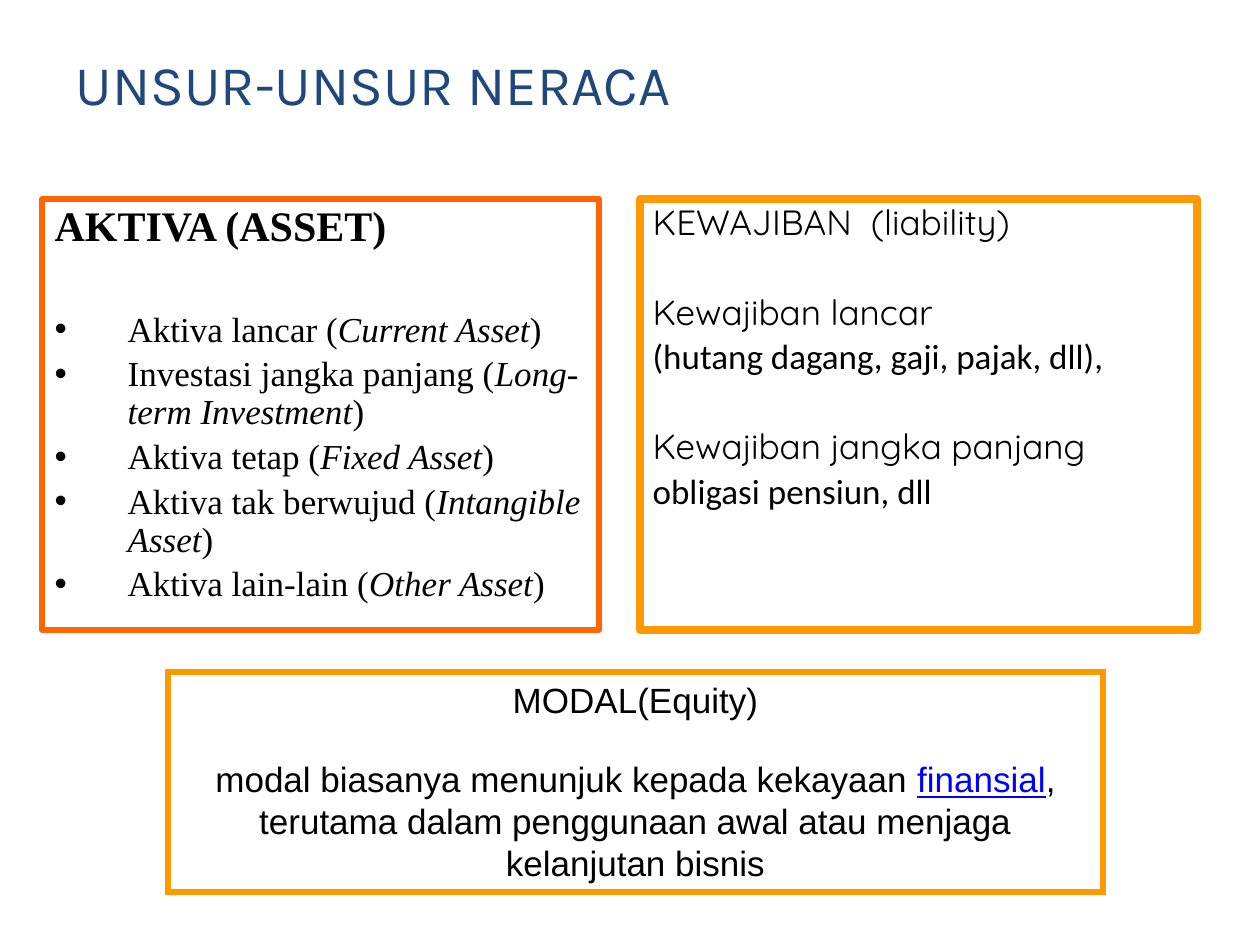
from dataclasses import dataclass

from lxml import etree
from pptx import Presentation
from pptx import util as u
from pptx.dml.color import RGBColor
from pptx.enum import shapes, text
from pptx.oxml.ns import qn

SCALE = 914400 / 126


def emu(px):
    return u.Emu(round(px * SCALE))


@dataclass(frozen=True)
class Theme:
    navy: str = "1F497D"
    black: str = "000000"
    blue: str = "0000FF"
    red: str = "FF6600"
    gold: str = "FF9900"
    title: int = 32
    head: int = 24
    body: int = 20


class Deck:
    """Holds the theme and the current slide, and adds elements to it."""

    def __init__(self, theme):
        self.theme = theme
        self.show = Presentation()
        self.show.slide_width, self.show.slide_height = emu(1260), emu(945)
        self.slide = self.show.slides.add_slide(self.show.slide_layouts[3])

    def place(self, shape, box):
        shape.left, shape.top, shape.width, shape.height = map(emu, box)
        frame = shape.text_frame
        frame.word_wrap = True
        frame.auto_size = text.MSO_AUTO_SIZE.NONE
        return frame

    def style(self, font, face, size, color):
        font.name, font.size = face, u.Pt(size)
        font.color.rgb = RGBColor.from_string(color)

    def border(self, shape, color, width):
        shape.fill.background()
        shape.line.color.rgb = RGBColor.from_string(color)
        shape.line.width = u.Pt(width)

    def line(self, frame, first, runs, face, size, gap, align=None):
        para = frame.paragraphs[0] if first else frame.add_paragraph()
        para.space_before = u.Pt(gap)
        if align is not None:
            para.alignment = align
        self.style(para.font, face, size, self.theme.black)
        for words in runs:
            para.add_run().text = words
        return para

    def indent(self, para, hang, mark):
        para.line_spacing = 0.9
        props = para._p.get_or_add_pPr()
        props.set("marL", str(emu(hang)))
        props.set("indent", str(-emu(hang)))
        bullet = etree.Element(qn("a:buChar" if mark else "a:buNone"))
        if mark:
            bullet.set("char", mark)
        props.find(qn("a:defRPr")).addprevious(bullet)

    def title(self, words, box):
        shape = self.slide.shapes.title
        frame = self.place(shape, box)
        frame.vertical_anchor = text.MSO_ANCHOR.MIDDLE
        para = frame.paragraphs[0]
        para.text = words
        para.alignment = text.PP_ALIGN.LEFT
        self.style(para.font, "Karla", self.theme.title, self.theme.navy)

    def assets(self, head, items, box):
        shape = self.slide.placeholders[1]
        frame = self.place(shape, box)
        self.border(shape, self.theme.red, 3)
        face = "Times New Roman"
        para = self.line(frame, True, [head], face, self.theme.head, 5)
        para.font.bold = True
        self.indent(para, 73, None)
        for i, (name, term) in enumerate(items):
            runs = [f"{name} (", term, ")"]
            gap = 4 if i else 35
            para = self.line(frame, False, runs, face, self.theme.body, gap)
            para.runs[1].font.italic = True
            self.indent(para, 73, "•")

    def debts(self, rows, box):
        shape = self.slide.placeholders[2]
        frame = self.place(shape, box)
        self.border(shape, self.theme.gold, 4.5)
        for i, (words, face, gap) in enumerate(rows):
            para = self.line(frame, i == 0, [words], face, self.theme.body, gap)
            self.indent(para, 48, None)

    def equity(self, head, runs, box):
        shape = self.slide.shapes.add_shape(
            shapes.MSO_SHAPE.RECTANGLE, *map(emu, box))
        shape.shadow.inherit = False
        frame = self.place(shape, box)
        frame.vertical_anchor = text.MSO_ANCHOR.TOP
        self.border(shape, self.theme.gold, 3)
        etree.SubElement(shape.line._ln, qn("a:miter")).set("lim", "800000")
        mid = text.PP_ALIGN.CENTER
        size = self.theme.body
        self.line(frame, True, [head], "Arial", size, 0, mid)
        para = self.line(frame, False, runs, "Arial", size, 21.5, mid)
        for run in para.runs:
            self.style(run.font, "Arial", size, self.theme.black)
        key = para.runs[1].font
        key.underline = True
        key.color.rgb = RGBColor.from_string(self.theme.blue)
        self.style(frame.paragraphs[0].runs[0].font, "Arial", size,
                   self.theme.black)


def main():
    deck = Deck(Theme())
    deck.title("UNSUR-UNSUR NERACA", (63, 38, 1134, 91))
    deck.assets("AKTIVA (ASSET)", [
        ("Aktiva lancar", "Current Asset"),
        ("Investasi jangka panjang", "Long-term Investment"),
        ("Aktiva tetap", "Fixed Asset"),
        ("Aktiva tak berwujud", "Intangible Asset"),
        ("Aktiva lain-lain", "Other Asset"),
    ], (42, 199, 557, 431))
    deck.debts([
        ("KEWAJIBAN  (liability)", "Quicksand", 4),
        ("Kewajiban lancar", "Quicksand", 29.5),
        ("(hutang dagang, gaji, pajak, dll),", "Calibri", 4),
        ("Kewajiban jangka panjang", "Quicksand", 29.5),
        ("obligasi pensiun, dll", "Calibri", 4),
    ], (640, 199, 557, 431))
    deck.equity("MODAL(Equity)", [
        "modal biasanya menunjuk kepada kekayaan ",
        "finansial",
        ", terutama dalam penggunaan awal atau menjaga kelanjutan bisnis",
    ], (168, 672, 935, 220))
    deck.show.save("out.pptx")


if __name__ == "__main__":
    main()
